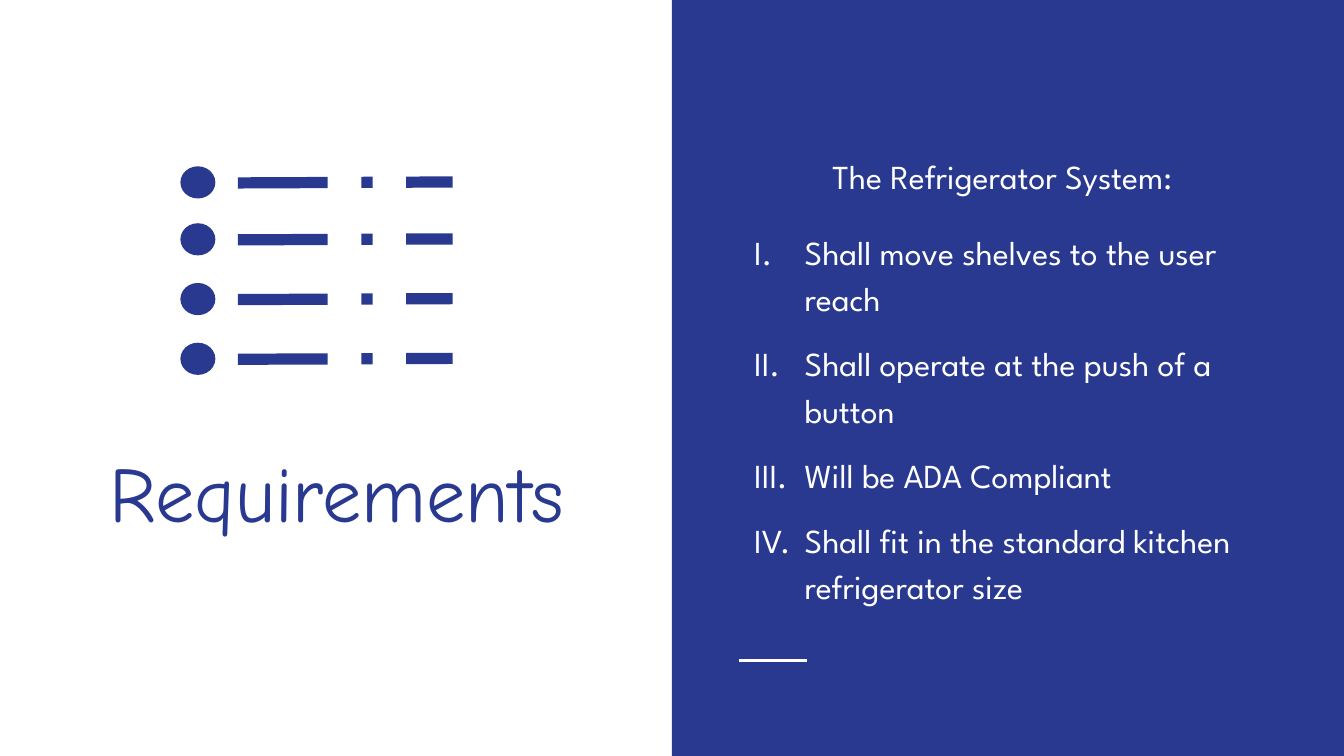
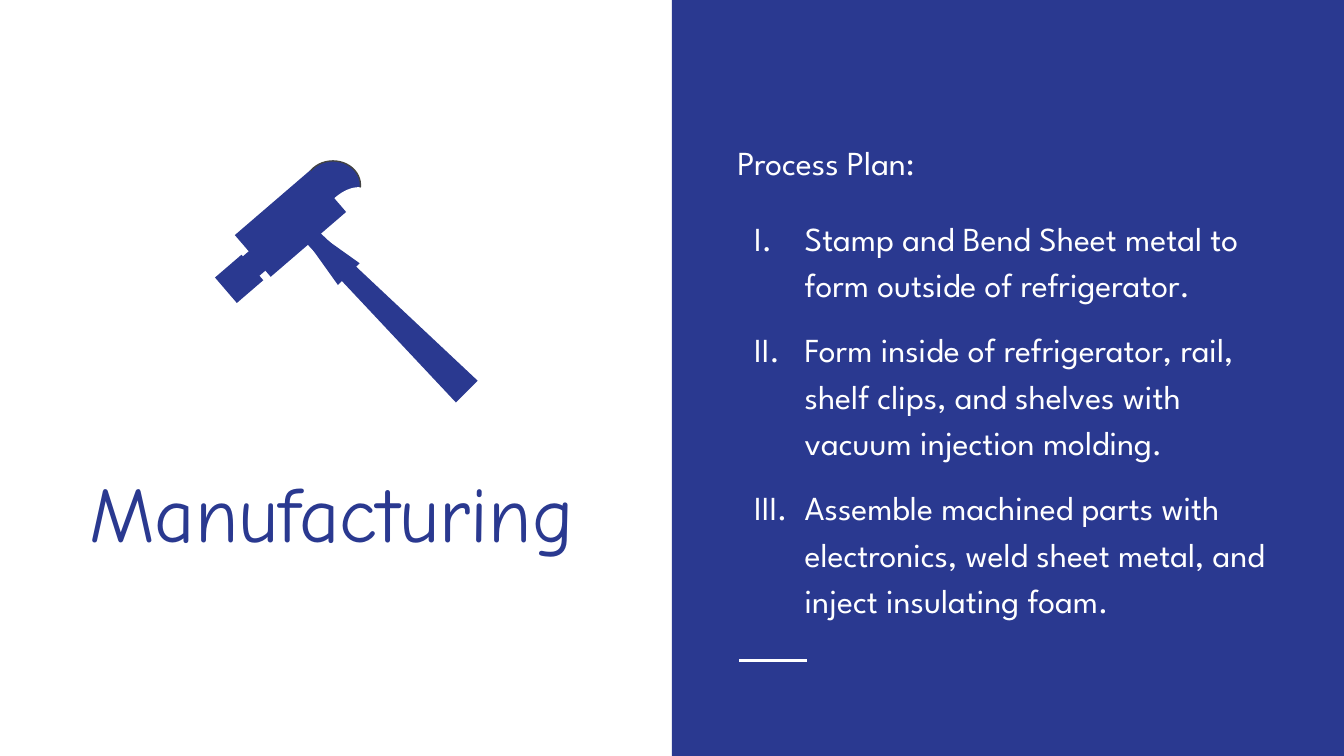
from lxml.etree import SubElement
from pptx import Presentation
from pptx.dml.color import RGBColor
from pptx.enum.dml import MSO_LINE
from pptx.enum.shapes import MSO_CONNECTOR, MSO_SHAPE
from pptx.enum.text import MSO_ANCHOR, PP_ALIGN
from pptx.oxml.ns import qn
from pptx.util import Pt

BLUE = RGBColor(0x2A, 0x39, 0x90)
GRAY = RGBColor(0x43, 0x43, 0x43)
WHITE = RGBColor(0xFF, 0xFF, 0xFF)
TITLE_FONT, BODY_FONT = "Comic Neue", "League Spartan"
WIDTH, HEIGHT = 720, 405


class Deck:
    """Holds the shared style and the current slide."""

    def __init__(self):
        self.prs = Presentation()
        self.prs.slide_width, self.prs.slide_height = Pt(WIDTH), Pt(HEIGHT)

    def new_slide(self):
        """Start a slide with the blue right half and its short white rule."""
        self.slide = self.prs.slides.add_slide(self.prs.slide_layouts[6])
        self.slide.background.fill.solid()
        self.slide.background.fill.fore_color.rgb = WHITE
        self.shape(MSO_SHAPE.RECTANGLE, WIDTH / 2, 0, WIDTH / 2, HEIGHT)
        self.line(396, 354, 432.5, 354, WHITE, 1.5)

    def shape(self, kind, left, top, width, height, fill=BLUE, outline=None,
              rotation=0, group=None):
        shapes = (group or self.slide).shapes
        shape = shapes.add_shape(kind, Pt(left), Pt(top), Pt(width), Pt(height))
        shape.shadow.inherit = False
        shape.rotation = rotation
        shape.fill.solid()
        shape.fill.fore_color.rgb = fill
        if outline is None:
            shape.line.fill.background()
        else:
            shape.line.color.rgb = outline
            shape.line.width = Pt(0.75)

    def line(self, x1, y1, x2, y2, color, width, dash=None):
        line = self.slide.shapes.add_connector(
            MSO_CONNECTOR.STRAIGHT, Pt(x1), Pt(y1), Pt(x2), Pt(y2))
        line.line.color.rgb = color
        line.line.width = Pt(width)
        if dash is not None:
            line.line.dash_style = dash
        SubElement(line._element.spPr, qn("a:effectLst"))

    def text_frame(self, left, top, width, height, anchor):
        box = self.slide.shapes.add_textbox(Pt(left), Pt(top), Pt(width), Pt(height))
        frame = box.text_frame
        frame.word_wrap = True
        frame.vertical_anchor = anchor
        frame.margin_left = frame.margin_right = Pt(7.2)
        frame.margin_top = frame.margin_bottom = Pt(7.2)
        return frame

    def add_text(self, paragraph, text, font, size, color, align=PP_ALIGN.LEFT):
        paragraph.alignment = align
        paragraph.line_spacing = 1.15
        run = paragraph.add_run()
        run.text = text
        run.font.name = font
        run.font.size = Pt(size)
        run.font.color.rgb = color

    def title(self, text, left, top, height):
        frame = self.text_frame(left, top, 318, height, MSO_ANCHOR.BOTTOM)
        self.add_text(frame.paragraphs[0], text, TITLE_FONT, 42, BLUE, PP_ALIGN.CENTER)

    def numbered_list(self, heading, items, heading_align=PP_ALIGN.LEFT):
        frame = self.text_frame(388, 57, 302.5, 291, MSO_ANCHOR.MIDDLE)
        self.add_text(frame.paragraphs[0], heading, BODY_FONT, 18, WHITE, heading_align)
        for index, item in enumerate(items):
            paragraph = frame.add_paragraph()
            self.add_text(paragraph, item, BODY_FONT, 18, WHITE)
            paragraph.space_before = Pt(10 if index else 16)
            paragraph.space_after = Pt(10 if index == len(items) - 1 else 0)
            self.roman_number(paragraph)

    def roman_number(self, paragraph):
        props = paragraph._p.get_or_add_pPr()
        props.set("marL", str(Pt(36)))
        props.set("indent", str(-Pt(27)))
        color = SubElement(props, qn("a:buClr"))
        SubElement(color, qn("a:srgbClr"), val=str(WHITE))
        SubElement(props, qn("a:buFont"), typeface=BODY_FONT)
        SubElement(props, qn("a:buAutoNum"), type="romanUcPeriod")

    def checklist_icon(self):
        for top in (89.5, 120, 152, 184):
            self.shape(MSO_SHAPE.OVAL, 97, top, 18, 16.5, outline=BLUE)
            self.line(127.5, top + 8.5, 242.5, top + 8, BLUE, 6,
                      MSO_LINE.LONG_DASH_DOT)

    def hammer_icon(self):
        hammer = self.slide.shapes.add_group_shape()
        tilt, handle_tilt = 319.3, 315
        # Striking face and neck
        self.shape(MSO_SHAPE.RECTANGLE, 118.8, 140.4, 18.7, 18, rotation=tilt, group=hammer)
        self.shape(MSO_SHAPE.RECTANGLE, 133.2, 133.2, 8.6, 13.7, rotation=tilt, group=hammer)
        # Claw, hollowed by a white oval
        self.shape(MSO_SHAPE.OVAL, 163.6, 86.2, 29.5, 26, outline=GRAY, group=hammer)
        self.shape(MSO_SHAPE.OVAL, 170, 103.7, 30.2, 16.5, WHITE, rotation=tilt, group=hammer)
        # Head
        self.shape(MSO_SHAPE.RECTANGLE, 129, 105, 53.3, 29.5, rotation=tilt, group=hammer)
        # Handle and collar
        self.shape(MSO_SHAPE.TRAPEZOID, 195.8, 98.6, 16.5, 130.3, rotation=handle_tilt, group=hammer)
        self.shape(MSO_SHAPE.TRAPEZOID, 170, 126, 16.5, 24.5, rotation=handle_tilt, group=hammer)


def main():
    deck = Deck()

    # Requirements
    deck.new_slide()
    deck.title("Requirements", 21.5, 212.5, 83)
    deck.numbered_list("The Refrigerator System: ", [
        "Shall move shelves to the user reach",
        "Shall operate at the push of a button",
        "Will be ADA Compliant",
        "Shall fit in the standard kitchen refrigerator size",
    ], PP_ALIGN.CENTER)
    deck.checklist_icon()

    # Manufacturing
    deck.new_slide()
    deck.title("Manufacturing", 18.5, 232.5, 73.5)
    deck.numbered_list("Process Plan:", [
        "Stamp and Bend Sheet metal to form outside of refrigerator.",
        "Form inside of refrigerator, rail, shelf clips, and shelves with "
        "vacuum injection molding.",
        "Assemble machined parts with electronics, weld sheet metal, and "
        "inject insulating foam.",
    ])
    deck.hammer_icon()

    deck.prs.save("out.pptx")


if __name__ == "__main__":
    main()
